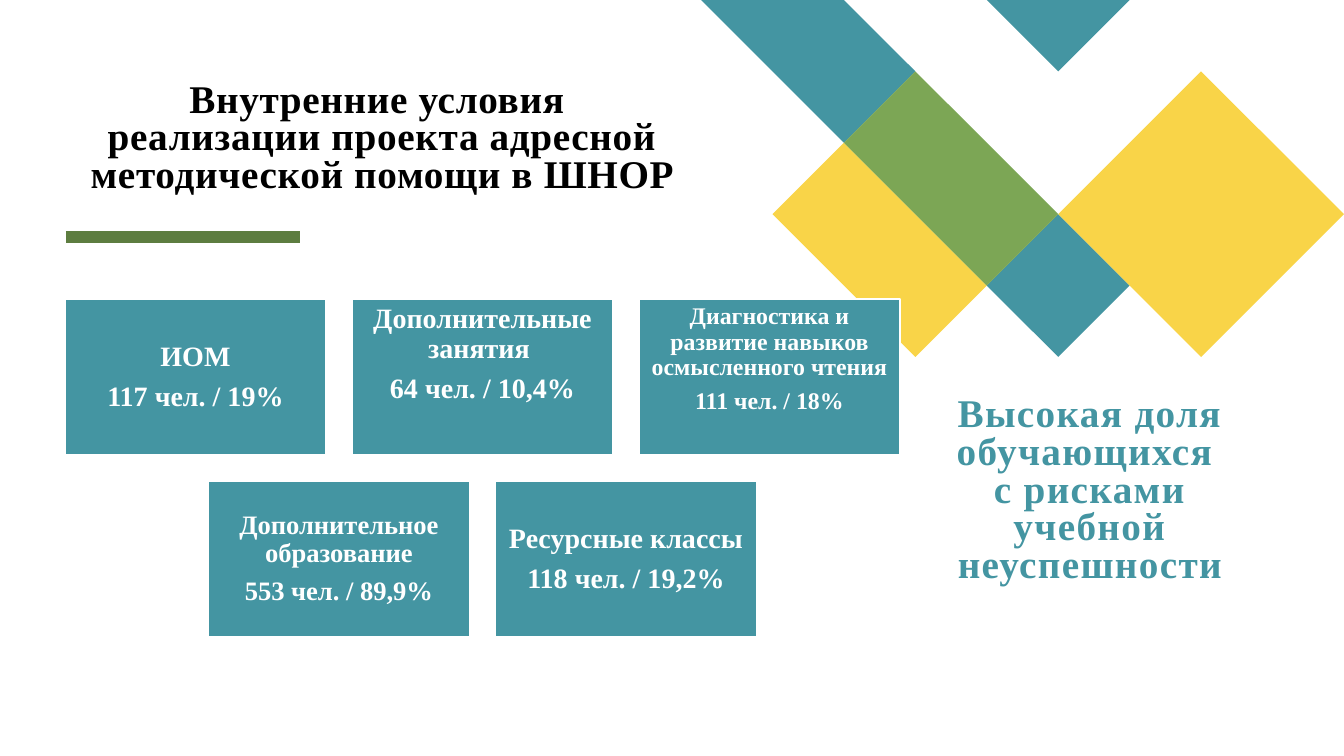
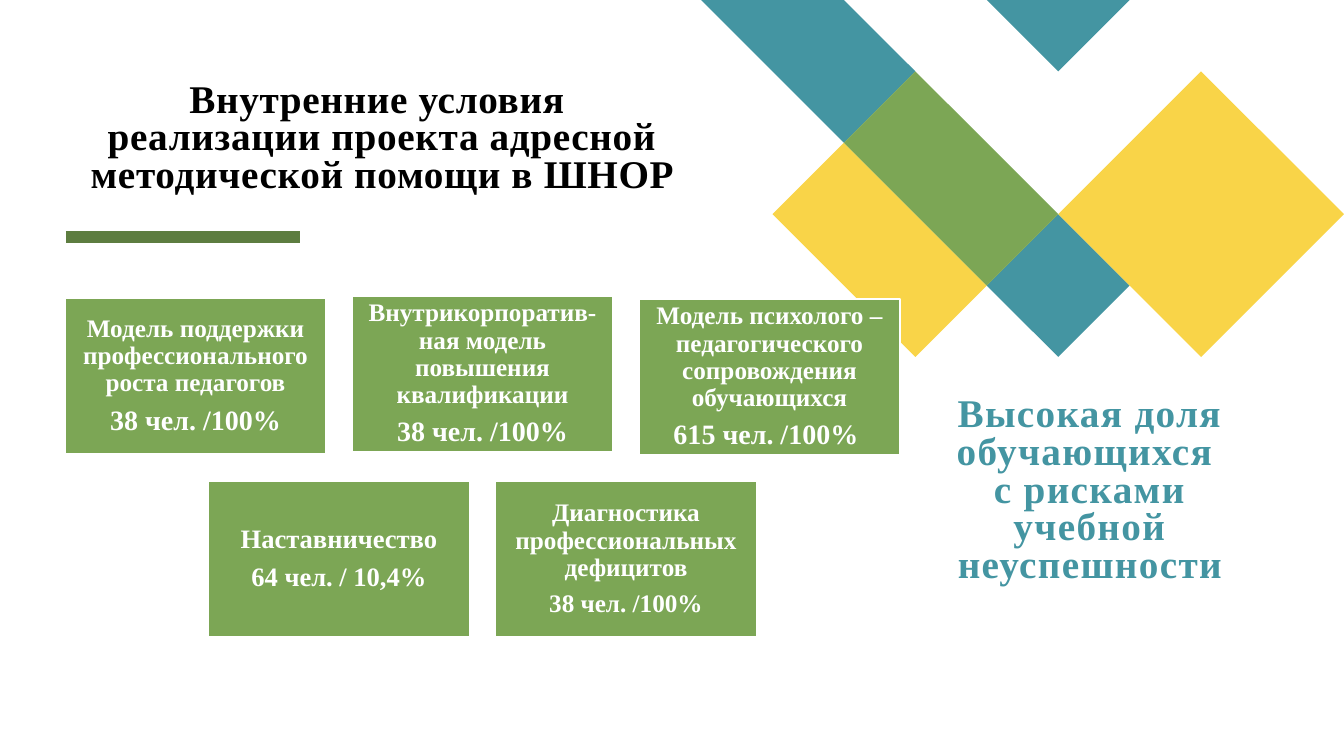
from dataclasses import dataclass
from typing import NamedTuple

from pptx import Presentation
from pptx.dml.color import RGBColor
from pptx.enum.shapes import MSO_CONNECTOR as Connector, MSO_SHAPE as Shape
from pptx.enum.text import MSO_ANCHOR as Anchor, PP_ALIGN as Align
from pptx.oxml.ns import qn
from pptx.util import Emu, Pt
from lxml.etree import SubElement


@dataclass(frozen=True)
class Theme:
    font: str = "Times New Roman"
    teal: str = "4495A2"
    yellow: str = "F9D448"
    green: str = "7CA655"
    dark_green: str = "5D7D40"
    black: str = "000000"
    white: str = "FFFFFF"
    heading_size: int = 28
    heading_leading: float = 0.8
    card_leading: float = 0.9
    card_gap: float = 0.35  # space after a paragraph, share of its type size
    rule_width: int = 8
    card_border: int = 1


class Box(NamedTuple):
    left: int
    top: int
    width: int
    height: int


class Card(NamedTuple):
    label: str
    count: str
    label_size: int
    count_size: int
    hung: bool = False  # text starts at the top edge
    lift: int = 0       # px above the row


THEME = Theme()
PAGE = Box(0, 0, 1344, 756)
TITLE = Box(66, 64, 633, 132)
RULE = Box(66, 237, 234, 0)
ORNAMENT = Box(701, 0, 643, 357)
CARDS = Box(65, 299, 835, 338)
CALLOUT = Box(944, 384, 292, 202)
CARD_WIDTH, CARD_HEIGHT, GUTTER, INSET, HUNG_INSET = 261, 156, 26, 7, 5

# Ornament outlines on a lattice of 9 columns and 5 rows
COLUMNS, ROWS = 9, 5
LATTICE = [
    (THEME.teal, [(2, 0), (0, 0), (2, 2), (3, 1)]),
    (THEME.teal, [(5, 3), (4, 4), (5, 5), (6, 4)]),
    (THEME.yellow, [(2, 2), (1, 3), (3, 5), (4, 4)]),
    (THEME.teal, [(6, 0), (4, 0), (5, 1)]),
    (THEME.green, [(3, 1), (2, 2), (4, 4), (5, 3)]),
    (THEME.yellow, [(9, 3), (7, 1), (5, 3), (7, 5)]),
]

HEADING = "Внутренние условия \vреализации проекта адресной методической помощи в ШНОР"
RISK = ["Высокая доля обучающихся ", "с рисками учебной неуспешности"]

PUPIL_CARDS = [
    [
        Card("ИОМ", "117 чел. / 19%", 20, 20),
        Card("Дополнительные занятия ", "64 чел. / 10,4%", 20, 20, hung=True),
        Card("Диагностика и развитие навыков осмысленного чтения",
             "111 чел. / 18%", 17, 17, hung=True),
    ],
    [
        Card("Дополнительное образование", "553 чел. / 89,9%", 19, 19),
        Card("Ресурсные классы", "118 чел. / 19,2%", 20, 20),
    ],
]
TEACHER_CARDS = [
    [
        Card("Модель поддержки профессионального роста педагогов",
             "38 чел. /100%", 18, 20, lift=1),
        Card("Внутрикорпоратив-ная модель повышения квалификации",
             "38 чел. /100%", 18, 20, lift=3),
        Card("Модель психолого – педагогического сопровождения обучающихся",
             "615 чел. /100% ", 18, 20),
    ],
    [
        Card("Наставничество", "64 чел. / 10,4%", 19, 19),
        Card("Диагностика профессиональных дефицитов", "38 чел. /100%", 18, 18),
    ],
]


def px(length):
    return Emu(round(length * 914400 / 100.8))


def place(box):
    return [px(length) for length in box]


def rgb(colour):
    return RGBColor.from_string(colour)


def paint(shape, fill, border=None):
    shape.shadow.inherit = False
    shape.fill.solid()
    shape.fill.fore_color.rgb = rgb(fill)
    if border:
        shape.line.color.rgb = rgb(border)
        shape.line.width = Pt(THEME.card_border)
    else:
        shape.line.fill.background()


def set_frame(frame, anchor, side, top):
    frame.word_wrap = True
    frame.vertical_anchor = anchor
    frame.margin_left = frame.margin_right = frame.margin_bottom = px(side)
    frame.margin_top = px(top)


def style(paragraph, size, colour, leading, tracking=0):
    paragraph.alignment = Align.CENTER
    paragraph.line_spacing = leading
    for run in paragraph.runs:
        run.font.name = THEME.font
        run.font.size = Pt(size)
        run.font.bold = True
        run.font.color.rgb = rgb(colour)
        if tracking:
            run.font._element.set("spc", str(round(tracking * 100)))


def draw_ornament(slide, box):
    def point(column, row):
        return (px(box.left + box.width * column / COLUMNS),
                px(box.top + box.height * row / ROWS))

    for colour, corners in LATTICE:
        start, *others = [point(*corner) for corner in corners]
        outline = slide.shapes.build_freeform(*start, scale=1.0)
        outline.add_line_segments(others, close=True)
        paint(outline.convert_to_shape(), colour)


def draw_rule(slide, box):
    rule = slide.shapes.add_connector(
        Connector.STRAIGHT, px(box.left), px(box.top),
        px(box.left + box.width), px(box.top))
    rule.line.color.rgb = rgb(THEME.dark_green)
    rule.line.width = Pt(THEME.rule_width)
    SubElement(rule._element.spPr, qn("a:effectLst"))


def draw_heading(slide, box, lines, colour, tracking):
    frame = slide.shapes.add_textbox(*place(box)).text_frame
    set_frame(frame, Anchor.BOTTOM, 0, 0)
    frame.text = "\n".join(lines)
    for paragraph in frame.paragraphs:
        style(paragraph, THEME.heading_size, colour, THEME.heading_leading, tracking)


def draw_card(slide, box, card, fill):
    panel = slide.shapes.add_shape(Shape.RECTANGLE, *place(box))
    paint(panel, fill, THEME.white)
    frame = panel.text_frame
    if card.hung:
        set_frame(frame, Anchor.TOP, INSET, HUNG_INSET)
    else:
        set_frame(frame, Anchor.MIDDLE, INSET, INSET)
    frame.text = f"{card.label}\n{card.count}"
    label, count = frame.paragraphs
    style(label, card.label_size, THEME.white, THEME.card_leading)
    style(count, card.count_size, THEME.white, THEME.card_leading)
    label.space_after = Pt(round(THEME.card_gap * card.label_size, 1))


def draw_cards(slide, box, rows, fill):
    """Rows of equal cards, each row centred in the box."""
    for row_index, row in enumerate(rows):
        row_width = len(row) * (CARD_WIDTH + GUTTER) - GUTTER
        left = box.left + (box.width - row_width) / 2
        top = box.top + row_index * (CARD_HEIGHT + GUTTER)
        for column, card in enumerate(row):
            spot = Box(left + column * (CARD_WIDTH + GUTTER), top - card.lift,
                       CARD_WIDTH, CARD_HEIGHT)
            draw_card(slide, spot, card, fill)


def add_conditions_slide(deck, rows, fill):
    slide = deck.slides.add_slide(deck.slide_layouts[6])
    # Shared frame
    draw_ornament(slide, ORNAMENT)
    draw_rule(slide, RULE)
    draw_heading(slide, TITLE, [HEADING], THEME.black, 0.5)
    # Measures and the risk they answer
    draw_cards(slide, CARDS, rows, fill)
    draw_heading(slide, CALLOUT, RISK, THEME.teal, 1)


def main():
    deck = Presentation()
    deck.slide_width, deck.slide_height = px(PAGE.width), px(PAGE.height)
    add_conditions_slide(deck, PUPIL_CARDS, THEME.teal)
    add_conditions_slide(deck, TEACHER_CARDS, THEME.green)
    deck.save("out.pptx")


if __name__ == "__main__":
    main()
